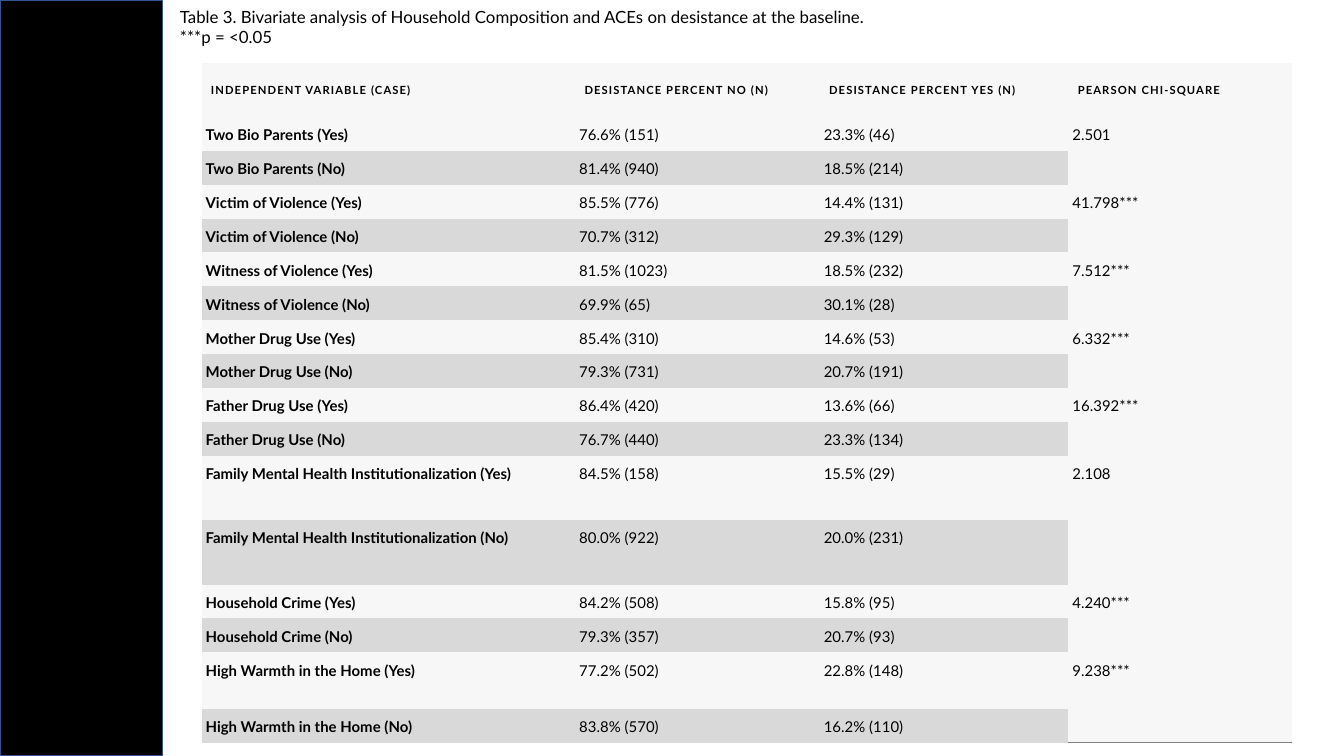
from lxml.etree import SubElement
from pptx import Presentation
from pptx.dml.color import RGBColor
from pptx.enum.shapes import MSO_SHAPE
from pptx.oxml import parse_xml
from pptx.oxml.ns import nsdecls, qn
from pptx.util import Inches, Pt

COLORS = {"black": "000000", "edge": "325491", "light": "F7F7F7",
          "band": "D9D9D9", "rule": "808080"}
FONT = "Lato"
NO_GRID_STYLE = "{2D5ABB26-0587-4C30-8999-92F81FD0307C}"

HEADERS = ["INDEPENDENT VARIABLE (CASE)", "DESISTANCE PERCENT NO (N)",
           "DESISTANCE PERCENT YES (N)", "PEARSON CHI-SQUARE"]
# variable, (no, yes) for Yes cases, (no, yes) for No cases, chi-square
VARIABLES = [
    ("Two Bio Parents", ("76.6% (151)", "23.3% (46)"), ("81.4% (940)", "18.5% (214)"), "2.501"),
    ("Victim of Violence", ("85.5% (776)", "14.4% (131)"), ("70.7% (312)", "29.3% (129)"), "41.798***"),
    ("Witness of Violence", ("81.5% (1023)", "18.5% (232)"), ("69.9% (65)", "30.1% (28)"), "7.512***"),
    ("Mother Drug Use", ("85.4% (310)", "14.6% (53)"), ("79.3% (731)", "20.7% (191)"), "6.332***"),
    ("Father Drug Use", ("86.4% (420)", "13.6% (66)"), ("76.7% (440)", "23.3% (134)"), "16.392***"),
    ("Family Mental Health Institutionalization", ("84.5% (158)", "15.5% (29)"),
     ("80.0% (922)", "20.0% (231)"), "2.108"),
    ("Household Crime", ("84.2% (508)", "15.8% (95)"), ("79.3% (357)", "20.7% (93)"), "4.240***"),
    ("High Warmth in the Home", ("77.2% (502)", "22.8% (148)"), ("83.8% (570)", "16.2% (110)"), "9.238***"),
]
COL_WIDTHS = [2.78, 1.82, 1.85, 1.66]
ROW_HEIGHT = 0.23
TALL_ROWS = {0: 0.4, 11: 0.48, 12: 0.48, 15: 0.42}


def add_run(p, text, size, bold=False):
    r = p.add_run()
    r.text = text
    r.font.name = FONT
    r.font.size = Pt(size)
    r.font.bold = bold
    r.font.color.rgb = RGBColor.from_string(COLORS["black"])
    return r


def fill_cell(cell, text, fill, insets, size, bold):
    """Insets are left, top, right, bottom in inches."""
    cell.margin_left, cell.margin_top, cell.margin_right, cell.margin_bottom = map(Inches, insets)
    cell.fill.solid()
    cell.fill.fore_color.rgb = RGBColor.from_string(COLORS[fill])
    p = cell.text_frame.paragraphs[0]
    p.line_spacing = Pt(13.1)
    return add_run(p, text, size, bold)


prs = Presentation()
prs.slide_width = Inches(10)
prs.slide_height = prs.slide_width * 9 // 16
s = prs.slides.add_slide(prs.slide_layouts[6])

# Side panel
panel = s.shapes.add_shape(MSO_SHAPE.RECTANGLE, 0, 0, Inches(1.21), prs.slide_height)
panel.shadow.inherit = False
panel.fill.solid()
panel.fill.fore_color.rgb = RGBColor.from_string(COLORS["black"])
panel.line.color.rgb = RGBColor.from_string(COLORS["edge"])
panel.line.width = Pt(1)

# Table
row_count = 1 + 2 * len(VARIABLES)
heights = [TALL_ROWS.get(i, ROW_HEIGHT) for i in range(row_count)]
table = s.shapes.add_table(row_count, len(HEADERS), Inches(1.5), Inches(0.47),
                           Inches(sum(COL_WIDTHS)), Inches(sum(heights))).table
table.horz_banding = False
table._tbl.tblPr.find(qn("a:tableStyleId")).text = NO_GRID_STYLE
for column, width in zip(table.columns, COL_WIDTHS):
    column.width = Inches(width)
for row, height in zip(table.rows, heights):
    row.height = Inches(height)

for col, header in enumerate(HEADERS):
    r = fill_cell(table.cell(0, col), header, "light", (0.07,) * 4, 6, True)
    r.font._element.set("spc", "60")

body_insets = (0.03, 0.02, 0.03, 0.05)
for i, (variable, yes_case, no_case, chi_square) in enumerate(VARIABLES):
    top = 1 + 2 * i
    cases = [("Yes", yes_case, "light"), ("No", no_case, "band")]
    for row, (case, values, fill) in enumerate(cases, top):
        for col, text in enumerate((f"{variable} ({case})", *values)):
            fill_cell(table.cell(row, col), text, fill, body_insets, 8, col == 0)
    chi_cell = table.cell(top, 3)
    chi_cell.merge(table.cell(top + 1, 3))
    fill_cell(chi_cell, chi_square, "light", body_insets, 8, False)

# Rule under the last chi-square cell, set on both merged rows
for row in (row_count - 2, row_count - 1):
    border = parse_xml(f'<a:lnB {nsdecls("a")} w="{Pt(0.75)}"><a:solidFill/></a:lnB>')
    SubElement(border[0], qn("a:srgbClr"), val=COLORS["rule"])
    table.cell(row, 3)._tc.get_or_add_tcPr().insert(0, border)

# Caption
tf = s.shapes.add_textbox(Inches(1.24), 0, Inches(8.75), Inches(0.4)).text_frame
tf.word_wrap = True
add_run(tf.paragraphs[0], "Table 3. Bivariate analysis of Household Composition and ACEs "
        "on desistance at the baseline.", 9)
add_run(tf.add_paragraph(), "***p = <0.05", 9)

prs.save("out.pptx")
